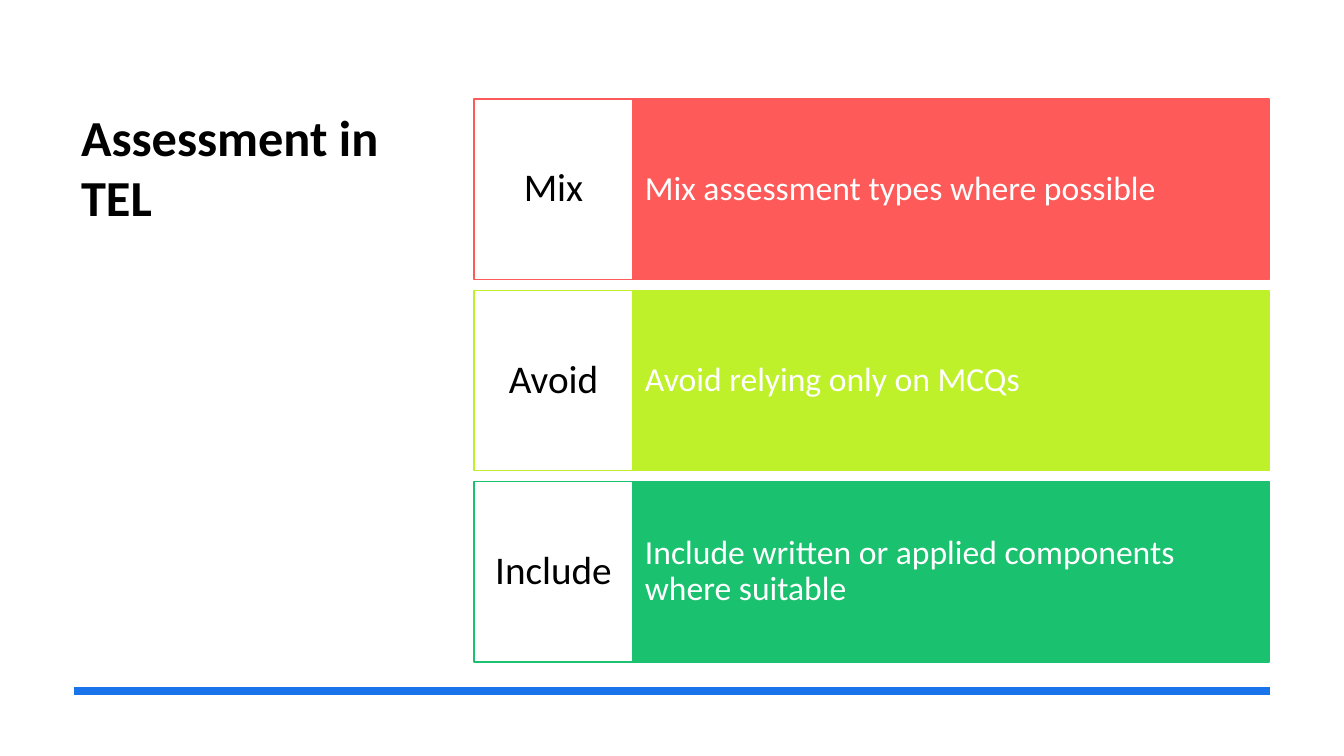
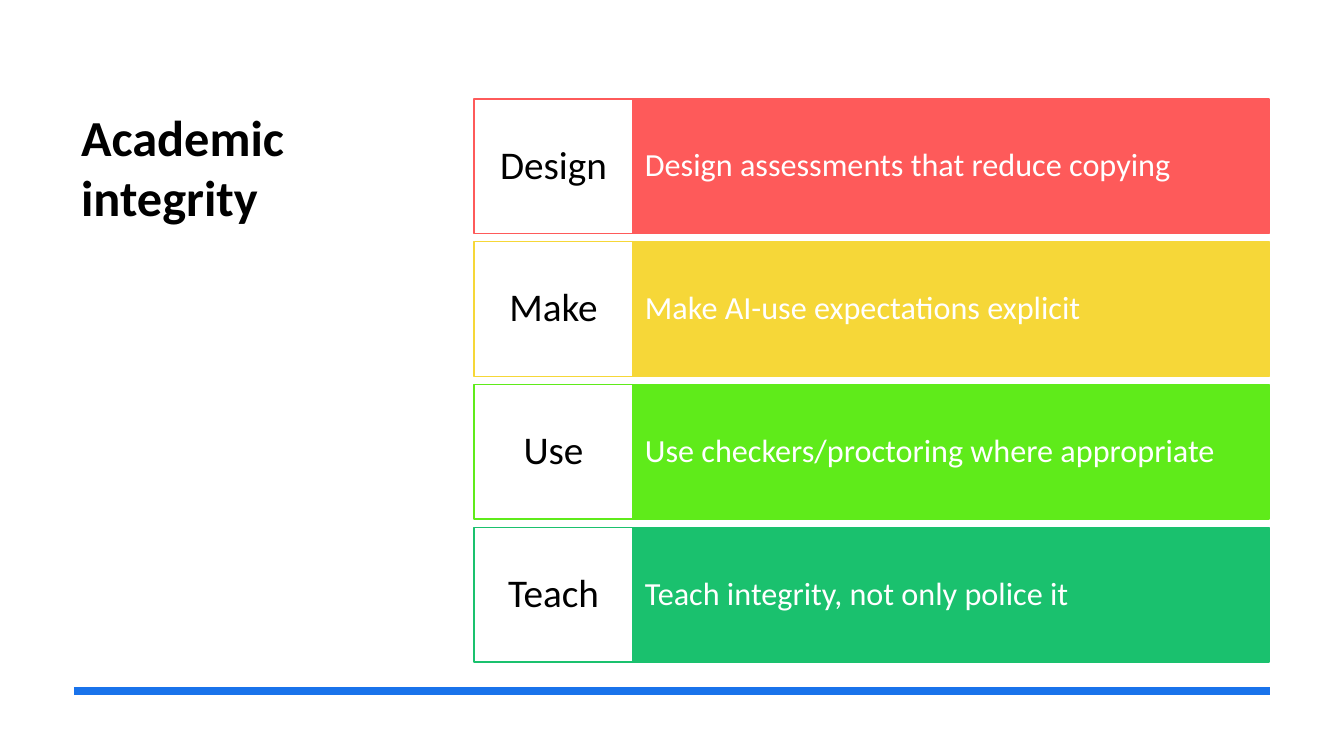
from lxml import etree
from pptx import Presentation, util as u
from pptx.dml.color import RGBColor
from pptx.enum import shapes, text
from pptx.oxml.ns import qn

SLIDE_WIDTH, SLIDE_HEIGHT = 1344, 756
SCALE = u.Inches(7.5) / SLIDE_HEIGHT
FONT = "Calibri"
BLACK, WHITE, BLUE = "000000", "FFFFFF", "1973EB"
RED, LIME, YELLOW, GREEN, TEAL = "FE5A5A", "BEF129", "F6D738", "5FEB1A", "1AC16E"
LABEL_LEFT, LABEL_WIDTH = 474, 159
DETAIL_LEFT, DETAIL_WIDTH = LABEL_LEFT + LABEL_WIDTH, 636
ROWS_TOP, ROWS_HEIGHT = 99, 563
GAP_RATIO = 0.06


def px(length):
    return u.Emu(round(length * SCALE))


def color(value):
    return RGBColor.from_string(value)


SLIDES = [
    ("Assessment in TEL", 24, [
        ("Mix", "Mix assessment types where possible", RED),
        ("Avoid", "Avoid relying only on MCQs", LIME),
        ("Include", "Include written or applied components where suitable", TEAL),
    ]),
    ("Academic integrity", 23, [
        ("Design", "Design assessments that reduce copying", RED),
        ("Make", "Make AI-use expectations explicit", YELLOW),
        ("Use", "Use checkers/proctoring where appropriate", GREEN),
        ("Teach", "Teach integrity, not only police it", TEAL),
    ]),
]

presentation = Presentation()
presentation.slide_width = px(SLIDE_WIDTH)
presentation.slide_height = px(SLIDE_HEIGHT)

for heading, detail_size, rows in SLIDES:
    slide = presentation.slides.add_slide(presentation.slide_layouts[5])

    title = slide.shapes.title
    title.left, title.top, title.width, title.height = px(71), px(101), px(331), px(459)
    frame = title.text_frame
    frame.text = heading
    frame.word_wrap = True
    frame.auto_size = text.MSO_AUTO_SIZE.NONE
    frame.vertical_anchor = text.MSO_ANCHOR.TOP
    paragraph = frame.paragraphs[0]
    paragraph.alignment = text.PP_ALIGN.LEFT
    paragraph.font.name = FONT
    paragraph.font.size = u.Pt(36)
    paragraph.font.bold = True
    paragraph.font.color.rgb = color(BLACK)

    rule = slide.shapes.add_connector(
        shapes.MSO_CONNECTOR.STRAIGHT, px(74), px(691), px(1270), px(691))
    rule.line.color.rgb = color(BLUE)
    rule.line.width = u.Pt(6)
    etree.SubElement(rule._element.spPr, qn("a:effectLst"))

    row_height = ROWS_HEIGHT / (len(rows) + GAP_RATIO * (len(rows) - 1))
    for index, (label, detail, accent) in enumerate(rows):
        top = ROWS_TOP + index * row_height * (1 + GAP_RATIO)
        cells = [
            (detail, DETAIL_LEFT, DETAIL_WIDTH, accent, WHITE, detail_size, 12, text.PP_ALIGN.LEFT),
            (label, LABEL_LEFT, LABEL_WIDTH, WHITE, BLACK, 28, 8, text.PP_ALIGN.CENTER),
        ]
        for wording, left, width, fill, ink, size, inset, alignment in cells:
            shape = slide.shapes.add_shape(
                shapes.MSO_SHAPE.RECTANGLE, px(left), px(top), px(width), px(row_height))
            shape.shadow.inherit = False
            shape.fill.solid()
            shape.fill.fore_color.rgb = color(fill)
            shape.line.color.rgb = color(accent)
            shape.line.width = u.Pt(1)
            frame = shape.text_frame
            frame.text = wording
            frame.word_wrap = True
            frame.vertical_anchor = text.MSO_ANCHOR.MIDDLE
            frame.margin_left = frame.margin_right = px(inset)
            paragraph = frame.paragraphs[0]
            paragraph.alignment = alignment
            paragraph.line_spacing = 0.9
            paragraph.font.name = FONT
            paragraph.font.size = u.Pt(size)
            paragraph.font.color.rgb = color(ink)

presentation.save("out.pptx")
